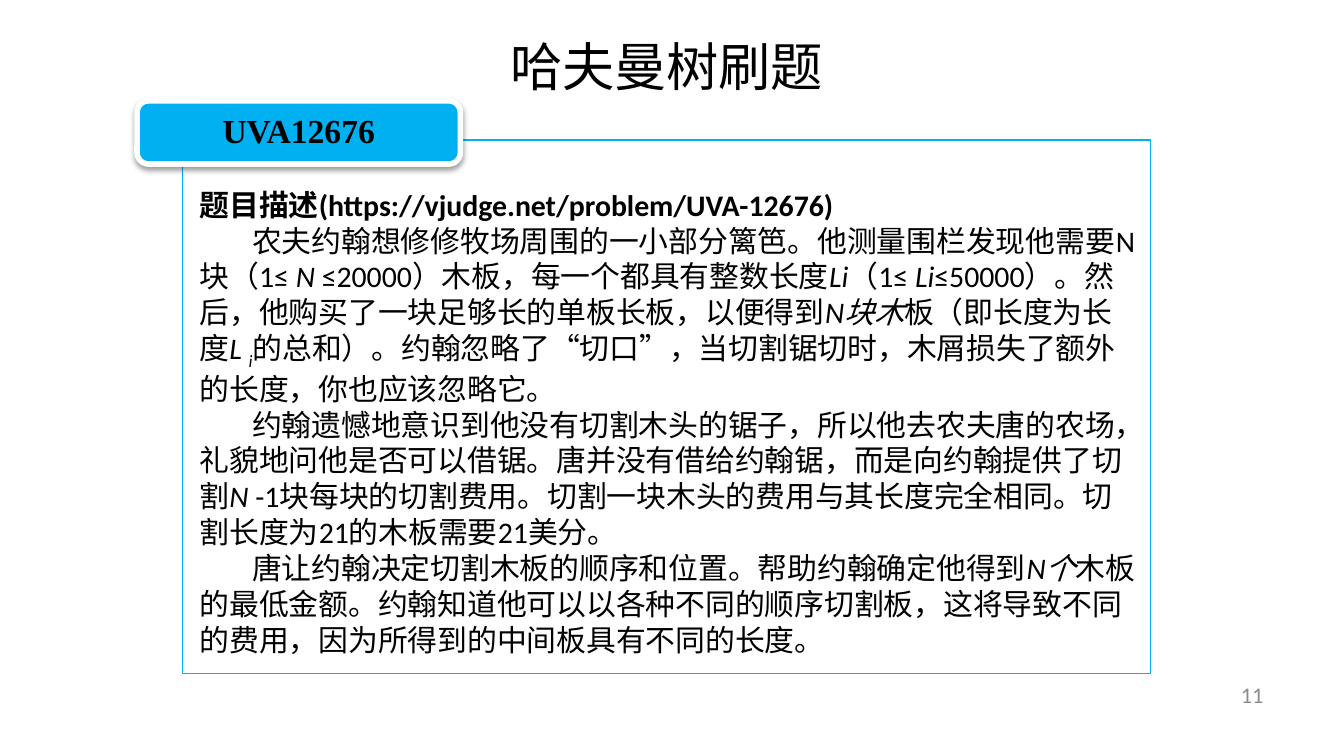
from dataclasses import dataclass, field
from typing import NamedTuple

from lxml.etree import SubElement
from pptx import Presentation
from pptx.dml.color import RGBColor
from pptx.enum.shapes import MSO_SHAPE
from pptx.enum.text import MSO_ANCHOR, MSO_AUTO_SIZE, PP_ALIGN
from pptx.oxml import parse_xml
from pptx.oxml.ns import nsdecls, qn
from pptx.util import Inches, Pt

BLACK = RGBColor(0x00, 0x00, 0x00)
WHITE = RGBColor(0xFF, 0xFF, 0xFF)
GREY = RGBColor(0x8C, 0x8C, 0x8C)
SKY = RGBColor(0x00, 0xB0, 0xF0)
WIDTH = Inches(10)
HEIGHT = WIDTH * 9 // 16

SHADOW = f"""<a:effectLst {nsdecls('a')}>
  <a:outerShdw blurRad="{Pt(3.1)}" dist="{Pt(1.6)}" dir="5400000" rotWithShape="0">
    <a:srgbClr val="000000"><a:alpha val="38000"/></a:srgbClr>
  </a:outerShdw>
</a:effectLst>"""


class Share(NamedTuple):
    left: float
    top: float
    width: float
    height: float

    def emu(self) -> tuple:
        return tuple(round(v * side / 100)
                     for v, side in zip(self, (WIDTH, HEIGHT) * 2))


class Run(NamedTuple):
    text: str
    italic: bool = False
    subscript: bool = False


@dataclass
class Para:
    runs: list
    font: dict
    format: dict = field(default_factory=dict)
    indent: float = 0


def style(name: str, size: float, color: RGBColor = BLACK, bold: bool = False) -> dict:
    return {"name": name, "size": Pt(size), "color": color, "bold": bold}


def fill_text(tf, paras: list, **frame) -> None:
    for key, value in {"word_wrap": True, **frame}.items():
        setattr(tf, key, value)
    for i, para in enumerate(paras):
        p = tf.add_paragraph() if i else tf.paragraphs[0]
        for key, value in para.format.items():
            setattr(p, key, value)
        if para.indent:
            p._p.get_or_add_pPr().set("indent", str(Inches(para.indent)))
        for run in para.runs:
            r = p.add_run()
            r.text = run.text
            for key, value in {**para.font, "italic": run.italic}.items():
                if key == "color":
                    r.font.color.rgb = value
                else:
                    setattr(r.font, key, value)
            if run.subscript:
                r._r.get_or_add_rPr().set("baseline", "-25000")


def add_text(s, share: Share, paras: list, **frame) -> None:
    fill_text(s.shapes.add_textbox(*share.emu()).text_frame, paras, **frame)


def add_box(s, kind, share: Share, fill: RGBColor, line: RGBColor, weight: float):
    sp = s.shapes.add_shape(kind, *share.emu())
    sp.shadow.inherit = False
    sp.fill.solid()
    sp.fill.fore_color.rgb = fill
    sp.line.color.rgb = line
    sp.line.width = Pt(weight)
    return sp


BODY = style("Calibri", 16)
STORY = [
    [Run("农夫约翰想修修牧场周围的一小部分篱笆。他测量围栏发现他需要N块（1≤ "),
     Run("N", True), Run(" ≤20000）木板，每一个都具有整数长度"),
     Run("Li", True), Run("（1≤ "), Run("Li", True),
     Run("≤50000）。然后，他购买了一块足够长的单板长板，以便得到"),
     Run("N块木", True), Run("板（即长度为长度"), Run("L ", True), Run("i", True, True),
     Run("的总和）。约翰忽略了“切口”，当切割锯切时，木屑损失了额外的长度，你也应该忽略它。")],
    [Run("约翰遗憾地意识到他没有切割木头的锯子，所以他去农夫唐的农场，礼貌地问他是否可以借锯。"
         "唐并没有借给约翰锯，而是向约翰提供了切割"),
     Run("N ", True),
     Run("-1块每块的切割费用。切割一块木头的费用与其长度完全相同。切割长度为21的木板需要21美分。")],
    [Run("唐让约翰决定切割木板的顺序和位置。帮助约翰确定他得到"), Run("N个", True),
     Run("木板的最低金额。约翰知道他可以以各种不同的顺序切割板，这将导致不同的费用，"
         "因为所得到的中间板具有不同的长度。")],
]


def main() -> None:
    prs = Presentation()
    prs.slide_width, prs.slide_height = WIDTH, HEIGHT
    s = prs.slides.add_slide(prs.slide_layouts[5])

    title = s.shapes.title
    title.left, title.top, title.width, title.height = Share(33.1, 0.71, 33, 11.91).emu()
    fill_text(title.text_frame,
              [Para([Run("哈夫曼树刷题")], style("Noto Sans CJK SC", 28),
                    {"alignment": PP_ALIGN.CENTER, "line_spacing": 1.35})],
              vertical_anchor=MSO_ANCHOR.TOP, auto_size=MSO_AUTO_SIZE.NONE)

    panel = add_box(s, MSO_SHAPE.RECTANGLE, Share(13.6, 18.52, 72, 70.6), WHITE, SKY, 0.75)
    color = panel._element.spPr.find(qn("a:solidFill"))[0]
    SubElement(color, qn("a:alpha")).set("val", "90000")

    badge = add_box(s, MSO_SHAPE.ROUNDED_RECTANGLE, Share(10.2, 13.35, 24.05, 8.36),
                    SKY, WHITE, 3)
    badge.adjustments[0] = 0.18
    spPr = badge._element.spPr
    spPr.replace(spPr.find(qn("a:effectLst")), parse_xml(SHADOW))
    fill_text(badge.text_frame,
              [Para([Run("UVA12676")], style("Times New Roman", 18, bold=True),
                    {"alignment": PP_ALIGN.CENTER, "line_spacing": 0.9})],
              vertical_anchor=MSO_ANCHOR.MIDDLE,
              margin_left=Inches(0.24), margin_right=Inches(0.24),
              margin_top=Inches(0.06), margin_bottom=Inches(0.06))

    heading = Para([Run("题目描述(https://vjudge.net/problem/UVA-12676)")],
                   {**BODY, "bold": True})
    add_text(s, Share(13.87, 23.8, 72, 64),
             [heading] + [Para(runs, BODY, indent=0.39) for runs in STORY],
             auto_size=MSO_AUTO_SIZE.SHAPE_TO_FIT_TEXT)

    add_text(s, Share(71.7, 89.24, 23.3, 5.33),
             [Para([Run("11")], style("Calibri", 12, GREY), {"alignment": PP_ALIGN.RIGHT})],
             vertical_anchor=MSO_ANCHOR.MIDDLE)

    prs.save("out.pptx")


if __name__ == "__main__":
    main()
